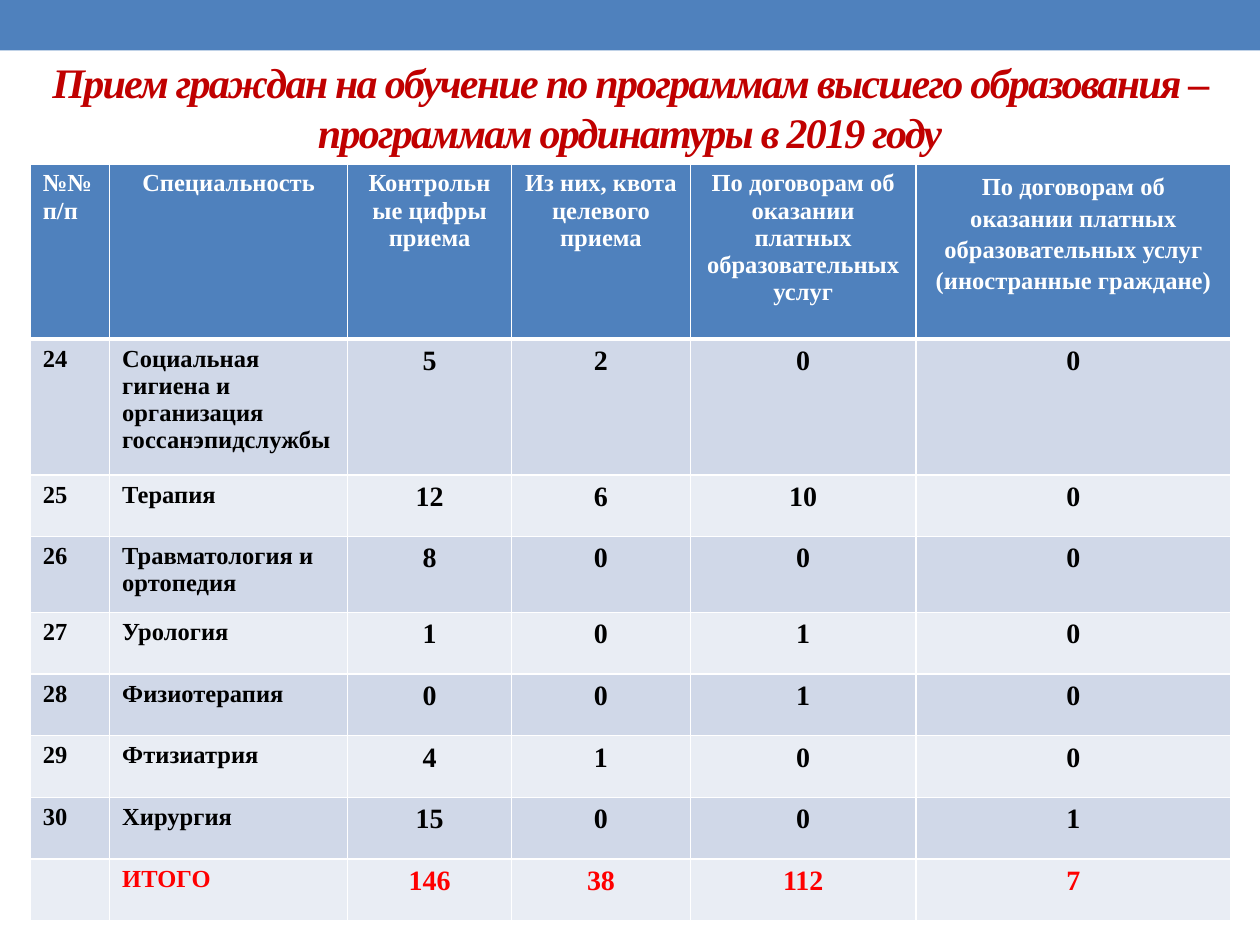
from lxml.etree import SubElement
from pptx import Presentation
from pptx.dml.color import RGBColor
from pptx.enum.shapes import MSO_SHAPE
from pptx.enum.text import MSO_ANCHOR, MSO_AUTO_SIZE, PP_ALIGN
from pptx.oxml.ns import qn
from pptx.util import Inches, Pt

BLUE, WHITE = "4F81BD", "FFFFFF"
BANDS = ["E9EDF4", "D0D8E8"]


def rgb(color):
    return RGBColor.from_string(color)


def write(p, text, size, color, **extra):
    r = p.add_run()
    r.text = text
    fmt = {"name": "Times New Roman", "size": Pt(size), "bold": True, **extra}
    for key, value in fmt.items():
        setattr(r.font, key, value)
    r.font.color.rgb = rgb(color)
    return r


prs = Presentation()
prs.slide_width, prs.slide_height = Inches(10), Inches(7.5)
s = prs.slides.add_slide(prs.slide_layouts[5])

# Top band
band = s.shapes.add_shape(MSO_SHAPE.RECTANGLE, 0, 0, Inches(10), Inches(0.4))
band.shadow.inherit = False
band.fill.solid()
band.fill.fore_color.rgb = rgb(BLUE)
band.line.fill.background()

# Title
title = s.shapes.title
title.left, title.top = Inches(0), Inches(0.39)
title.width, title.height = Inches(10), Inches(0.91)
tf = title.text_frame
tf.word_wrap = True
tf.auto_size = MSO_AUTO_SIZE.NONE
tf.vertical_anchor = MSO_ANCHOR.MIDDLE
p = tf.paragraphs[0]
p.alignment = PP_ALIGN.CENTER
r = write(p, "Прием граждан на обучение по программам высшего образования – "
          "программам ординатуры в 2019 году", 24, "C00000", italic=True)
r.font._element.set("spc", "-100")

# Admission figures
paid = "По договорам об оказании платных образовательных услуг"
rows = [
    ["№№\nп/п", "Специальность", "Контрольные цифры приема",
     "Из них, квота целевого приема", paid, paid + "\n(иностранные граждане)"],
    [24, "Социальная гигиена и организация госсанэпидслужбы", 5, 2, 0, 0],
    [25, "Терапия", 12, 6, 10, 0],
    [26, "Травматология и ортопедия", 8, 0, 0, 0],
    [27, "Урология", 1, 0, 1, 0],
    [28, "Физиотерапия", 0, 0, 1, 0],
    [29, "Фтизиатрия", 4, 1, 0, 0],
    [30, "Хирургия", 15, 0, 0, 1],
    ["", "ИТОГО", 146, 38, 112, 7],
]
widths = [0.63, 1.89, 1.3, 1.42, 1.79, 2.5]
heights = [1.39, 1.08, 0.49, 0.6] + [0.49] * 5
table = s.shapes.add_table(len(rows), len(widths), Inches(0.24), Inches(1.3),
                           Inches(sum(widths)), Inches(sum(heights))).table
for column, width in zip(table.columns, widths):
    column.width = Inches(width)
for row, height in zip(table.rows, heights):
    row.height = Inches(height)

for i, values in enumerate(rows):
    header, total = i == 0, i == len(rows) - 1
    color = WHITE if header else "FF0000" if total else "000000"
    for j, value in enumerate(values):
        cell = table.cell(i, j)

        # White borders, thicker under the header
        tcPr = cell._tc.get_or_add_tcPr()
        for side in "LRTB":
            thick = (header and side == "B") or (i == 1 and side == "T")
            ln = SubElement(tcPr, qn("a:ln" + side), w=str(Pt(3 if thick else 1)))
            SubElement(SubElement(ln, qn("a:solidFill")), qn("a:srgbClr"), val=WHITE)
        cell.fill.solid()
        cell.fill.fore_color.rgb = rgb(BLUE if header else BANDS[i % 2])

        # Cell text
        if value == "":
            continue
        centred = j > 1 or (header and j == 1)
        size = 16 if j > 1 and not header else 14
        tf = cell.text_frame
        for n, line in enumerate(str(value).split("\n")):
            p = tf.add_paragraph() if n else tf.paragraphs[0]
            p.alignment = PP_ALIGN.CENTER if centred else PP_ALIGN.LEFT
            if header and j == 5:
                p.line_spacing = 1.15
            write(p, line, size, color)

prs.save("out.pptx")
